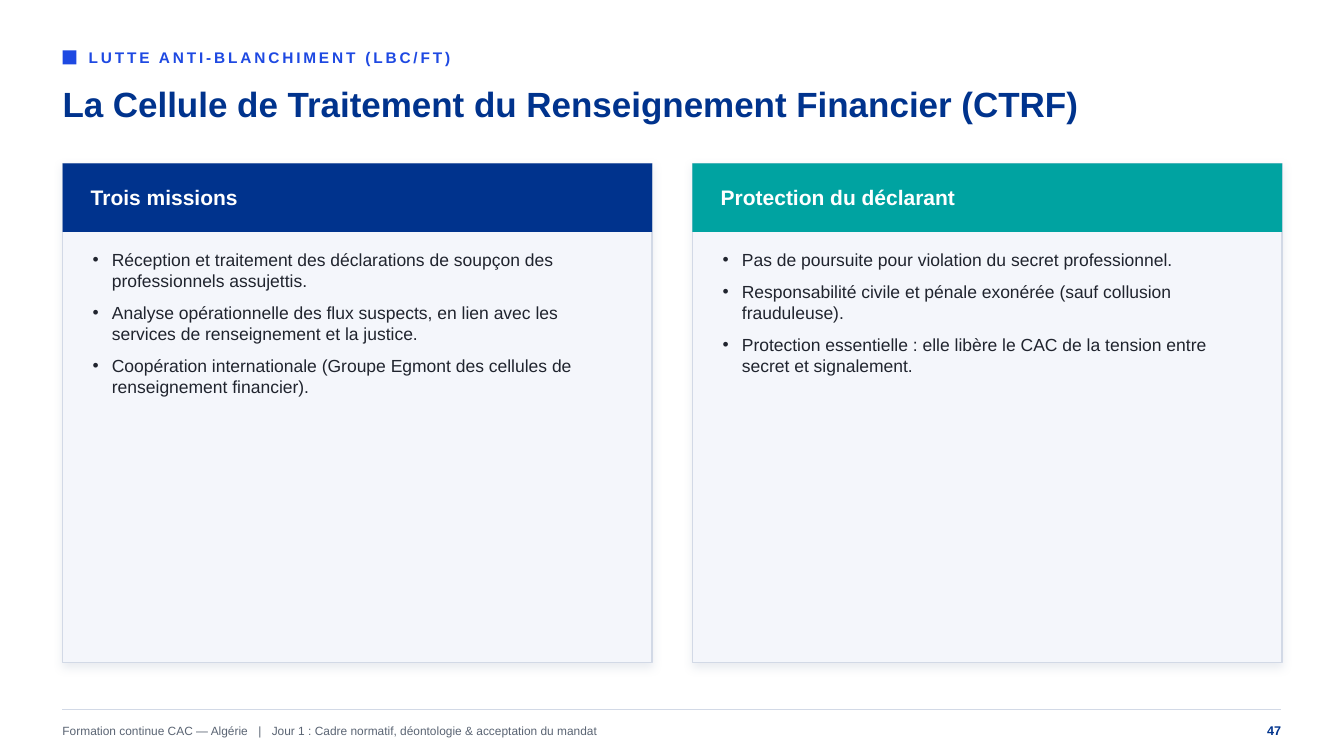
from lxml import etree
from pptx import Presentation
from pptx.dml.color import RGBColor
from pptx.enum import shapes, text
from pptx.oxml.ns import qn
from pptx.util import Pt

KICK = "LUTTE ANTI-BLANCHIMENT (LBC/FT)"
TITLE = "La Cellule de Traitement du Renseignement Financier (CTRF)"
CARDS = [
    ("Trois missions", "navy", [
        "Réception et traitement des déclarations de soupçon des professionnels assujettis.",
        "Analyse opérationnelle des flux suspects, en lien avec les services de renseignement et la justice.",
        "Coopération internationale (Groupe Egmont des cellules de renseignement financier).",
    ]),
    ("Protection du déclarant", "teal", [
        "Pas de poursuite pour violation du secret professionnel.",
        "Responsabilité civile et pénale exonérée (sauf collusion frauduleuse).",
        "Protection essentielle : elle libère le CAC de la tension entre secret et signalement.",
    ]),
]
FOOT = ["Formation continue CAC — Algérie", "|",
        "Jour 1 : Cadre normatif, déontologie & acceptation du mandat"]
STOPS = [140, 149.5]
PAGE = "47"
HEX = {"navy": "00338D", "teal": "00A3A1", "blue": "1E49E2", "pale": "F4F6FB",
       "edge": "D2D9E6", "shade": "9AA7BD", "ink": "20242E", "grey": "5A6473",
       "white": "FFFFFF"}

LEFT, RIGHT = 44.64, 915.12
TOP, WIDE, TALL, HEAD = 116.64, 421.2, 356.4, 48.96
STEP = 450


def color(name):
    return RGBColor.from_string(HEX[name])


def add(parent, tag, **attrs):
    return etree.SubElement(parent, qn(tag), attrs)


def rect(x, y, w, h, fill):
    box = slide.shapes.add_shape(shapes.MSO_SHAPE.RECTANGLE, Pt(x), Pt(y), Pt(w), Pt(h))
    box.shadow.inherit = False
    box.fill.solid()
    box.fill.fore_color.rgb = color(fill)
    box.line.fill.background()
    return box


def shade(box):
    glow = add(box.element.spPr.find(qn("a:effectLst")), "a:outerShdw",
               blurRad=str(Pt(7)), dist=str(Pt(3)), dir="5400000",
               algn="ctr", rotWithShape="0")
    tint = add(glow, "a:srgbClr", val=HEX["shade"])
    add(tint, "a:alpha", val="22000")


def place(box, x, y, w, h, anchor=text.MSO_ANCHOR.MIDDLE):
    box.left, box.top, box.width, box.height = Pt(x), Pt(y), Pt(w), Pt(h)
    frame = box.text_frame
    frame.word_wrap = True
    frame.auto_size = text.MSO_AUTO_SIZE.NONE
    frame.vertical_anchor = anchor
    frame.margin_left = frame.margin_right = frame.margin_top = frame.margin_bottom = 0
    box.element.getparent().append(box.element)
    return frame


def style(para, size, fill, bold=False, align=text.PP_ALIGN.LEFT):
    para.alignment = align
    font = para.font
    font.name, font.size, font.bold = "Arial", Pt(size), bold
    font.color.rgb = color(fill)


def label(words, x, y, w, h):
    box = slide.shapes.add_textbox(0, 0, 0, 0)
    para = place(box, x, y, w, h).paragraphs[0]
    para.text = words
    return para


def bullets(frame, items):
    frame.text = "\n".join(items)
    for para in frame.paragraphs:
        para.space_before, para.space_after = Pt(0), Pt(8)
        props = para._p.get_or_add_pPr()
        props.set("marL", str(Pt(13.7)))
        props.set("indent", str(-Pt(13.7)))
        add(props, "a:buFont", typeface="Arial")
        add(props, "a:buChar", char="•")
        style(para, 12.5, "ink")


deck = Presentation()
deck.slide_width, deck.slide_height = Pt(960), Pt(540)
slide = deck.slides.add_slide(deck.slide_layouts[3])
title, *bodies = slide.placeholders

rect(LEFT, 36, 10, 10, "blue")
kick = label(KICK, 63.36, 31, 864, 20)
style(kick, 11, "blue", True)
kick.runs[0]._r.get_or_add_rPr().set("spc", "200")

head = place(title, LEFT, 51.84, 871.2, 44.64)
head.text = TITLE
style(head.paragraphs[0], 25, "navy", True)

for i, ((name, fill, items), body) in enumerate(zip(CARDS, bodies)):
    x = LEFT + i * STEP
    card = rect(x, TOP, WIDE, TALL, "pale")
    card.line.color.rgb = color("edge")
    card.line.width = Pt(1)
    shade(card)
    rect(x, TOP, WIDE, HEAD, fill)
    style(label(name, x + 20.16, TOP, 385.2, HEAD), 15, "white", True)
    bullets(place(body, x + 21.6, 177.84, 378, 284.4, text.MSO_ANCHOR.TOP), items)

rule = slide.shapes.add_connector(shapes.MSO_CONNECTOR.STRAIGHT,
                                  Pt(LEFT), Pt(506.88), Pt(RIGHT), Pt(506.88))
rule.line.color.rgb = color("edge")
rule.line.width = Pt(1)
add(rule.element.spPr, "a:effectLst")

foot = label("\t".join(FOOT), LEFT, 511.2, 756, 21.6)
tabs = add(foot._p.get_or_add_pPr(), "a:tabLst")
for stop in STOPS:
    add(tabs, "a:tab", pos=str(Pt(stop)), algn="l")
style(foot, 8.5, "grey")
style(label(PAGE, RIGHT - 72, 511.2, 72, 21.6), 9, "navy", True, text.PP_ALIGN.RIGHT)

deck.save("out.pptx")
